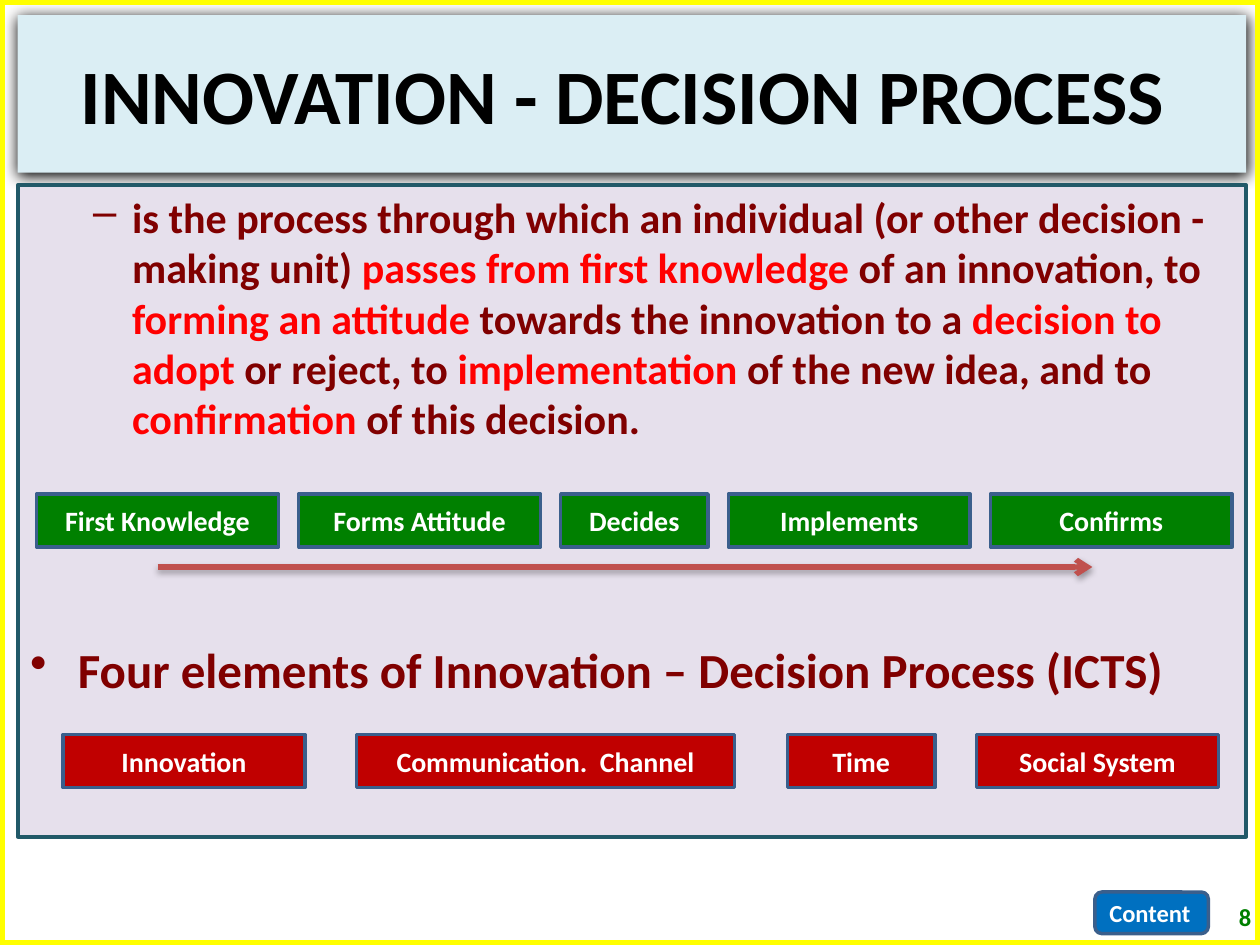
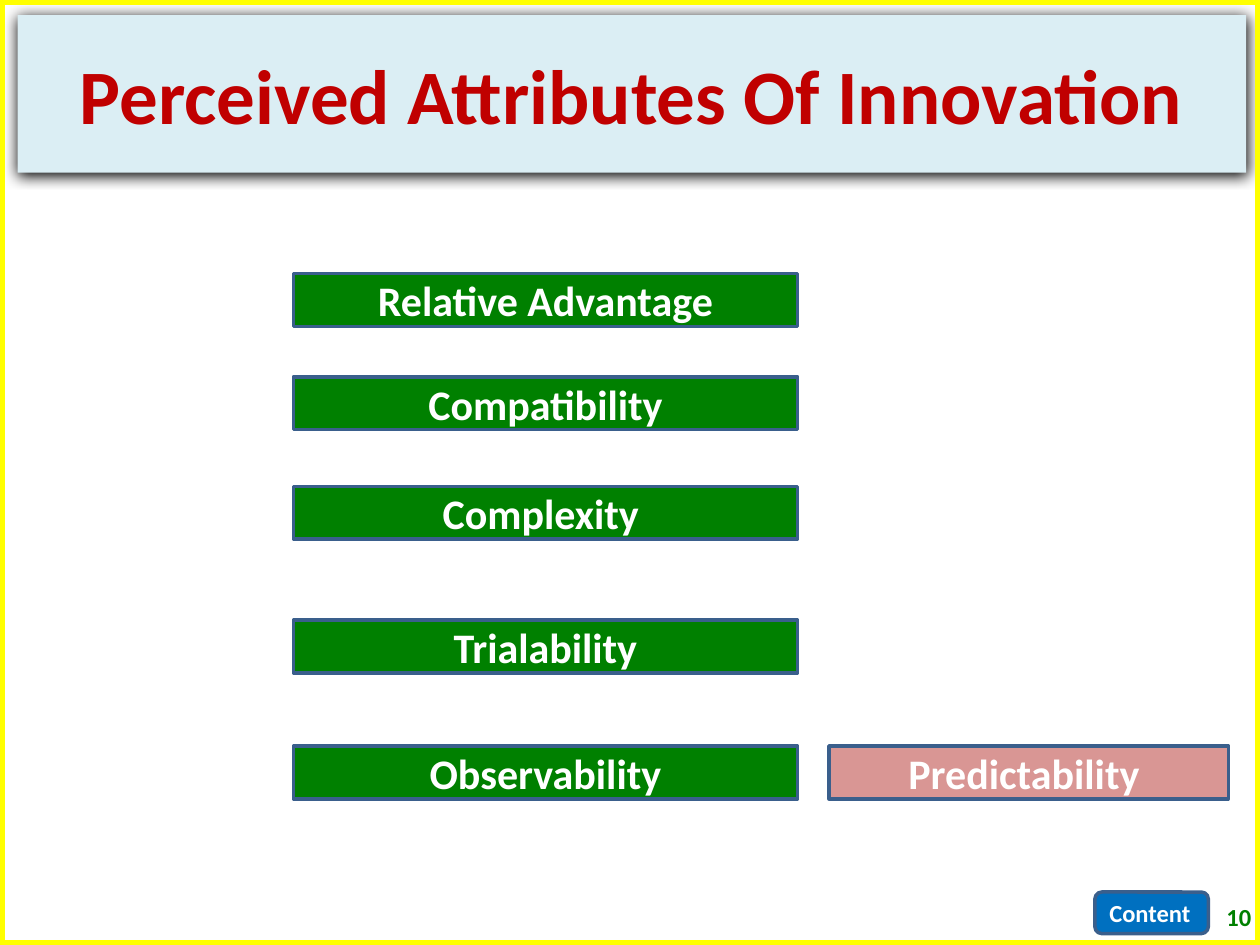
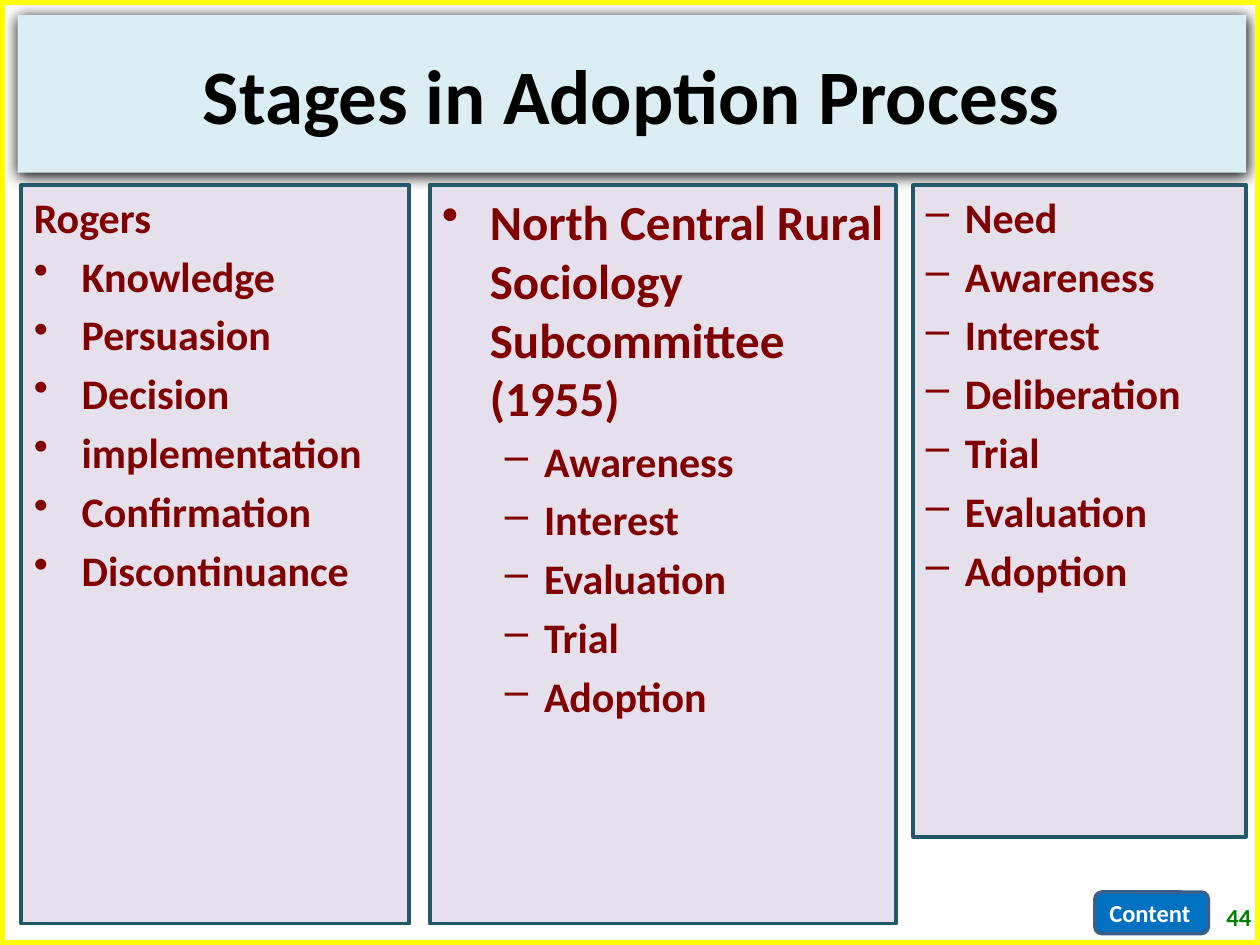
"""Build three slides on the innovation-decision and adoption processes."""
from lxml.etree import SubElement
from pptx import Presentation
from pptx.dml.color import RGBColor
from pptx.enum.shapes import MSO_CONNECTOR, MSO_SHAPE
from pptx.enum.text import MSO_ANCHOR, MSO_AUTO_SIZE, PP_ALIGN
from pptx.oxml import parse_xml
from pptx.oxml.ns import nsdecls, qn
from pptx.util import Inches, Pt

HUES = {
    "frame": "FFFF00", "button": "0070C0", "edge": "3A5F8C", "band": "DBEEF4",
    "panel": "E6E0EC", "rim": "215968", "text": "800000", "key": "FF0000",
    "green": "008000", "red": "C00000", "pink": "D99694", "arrow": "C0504D",
    "black": "000000", "white": "FFFFFF",
}
SHADE = (
    "<a:effectLst %s>"
    '<a:outerShdw blurRad="{}" dist="{}" dir="5400000" algn="ctr" rotWithShape="0">'
    '<a:srgbClr val="000000"><a:alpha val="{}"/></a:srgbClr>'
    "</a:outerShdw></a:effectLst>" % nsdecls("a")
)
MARKS = {
    "plain": ("", 0, 0, 0),
    "dot": ("•", 0, 0.38, 0.38),
    "sub": ("–", 1, 0.81, 0.31),
    "dash": ("–", 0, 0.31, 0.31),
}


def box(page, at, fill, edge, thick, kind=MSO_SHAPE.RECTANGLE):
    item = page.shapes.add_shape(kind, *map(Inches, at))
    item.shadow.inherit = False
    if fill:
        item.fill.solid()
        item.fill.fore_color.rgb = RGBColor.from_string(HUES[fill])
    else:
        item.fill.background()
    item.line.color.rgb = RGBColor.from_string(HUES[edge])
    item.line.width = Pt(thick)
    return item


def write(par, text, size, hue, align=PP_ALIGN.LEFT):
    par.alignment = align
    run = par.add_run()
    run.text = text
    run.font.name = "Calibri"
    run.font.size = Pt(size)
    run.font.bold = True
    run.font.color.rgb = RGBColor.from_string(HUES[hue])


deck = Presentation()
deck.slide_width, deck.slide_height = Inches(10), Inches(7.5)

heads = [
    ("INNOVATION - DECISION PROCESS ", "black", "8"),
    ("Perceived Attributes Of Innovation", "red", "10"),
    ("Stages in Adoption Process", "black", "44"),
]
for text, hue, count in heads:
    page = deck.slides.add_slide(deck.slide_layouts[5])
    frame = box(page, (0, 0, 10, 7.5), None, "frame", 6, MSO_SHAPE.ROUNDED_RECTANGLE)
    frame.adjustments[0] = 0
    button = box(page, (8.69, 7.08, 0.9, 0.33), "button", "edge", 2,
                 MSO_SHAPE.ROUNDED_RECTANGLE)
    write(button.text_frame.paragraphs[0], "Content", 14, "white")

    title = page.shapes.title
    title.left, title.top = Inches(0.14), Inches(0.12)
    title.width, title.height = Inches(9.75), Inches(1.25)
    title.fill.solid()
    title.fill.fore_color.rgb = RGBColor.from_string(HUES["band"])
    title._element.spPr.append(parse_xml(SHADE.format(Pt(8.5), Pt(1), 100000)))
    title.text_frame.auto_size = MSO_AUTO_SIZE.NONE
    title.text_frame.vertical_anchor = MSO_ANCHOR.MIDDLE
    write(title.text_frame.paragraphs[0], text, 44, hue, PP_ALIGN.CENTER)

    note = page.shapes.add_textbox(*map(Inches, (9.53, 7.08, 0.5, 0.39)))
    note.text_frame.word_wrap = True
    note.text_frame.vertical_anchor = MSO_ANCHOR.MIDDLE
    write(note.text_frame.paragraphs[0], count, 14, "green", PP_ALIGN.RIGHT)

first, second, third = deck.slides

story = [
    ("is the process through which an individual (or other decision - making unit) ", "text"),
    ("passes from first knowledge ", "key"),
    ("of an innovation, to ", "text"),
    ("forming an attitude ", "key"),
    ("towards the innovation to a ", "text"),
    ("decision to adopt ", "key"),
    ("or reject, to ", "text"),
    ("implementation", "key"),
    (" of the new idea, and to ", "text"),
    ("confirmation", "key"),
    (" of this decision.", "text"),
]
four = [("Four elements of Innovation – Decision Process (ICTS)", "text")]
north = [("North Central Rural Sociology Subcommittee (1955)", "text")]
stages = ["Awareness", "Interest", "Evaluation", "Trial", "Adoption"]
needs = ["Need", "Awareness", "Interest", "Deliberation", "Trial", "Evaluation", "Adoption"]
steps = ["Knowledge", "Persuasion", "Decision", "implementation", "Confirmation",
         "Discontinuance"]
panels = [
    (first, (0.14, 1.47, 9.75, 5.17),
     [("sub", 24, 0, story), ("dot", 28, 112, four)]),
    (third, (3.41, 1.47, 3.7, 5.86),
     [("dot", 28, 0, north)] + [("sub", 24, 4.8, [(word, "text")]) for word in stages]),
    (third, (7.25, 1.47, 2.64, 5.17),
     [("dash", 24, 4.8, [(word, "text")]) for word in needs]),
    (third, (0.17, 1.47, 3.08, 5.86),
     [("plain", 24, 0, [("Rogers", "text")])]
     + [("dot", 24, 4.8, [(word, "text")]) for word in steps]),
]
for page, at, lines in panels:
    body = box(page, at, "panel", "rim", 2.25).text_frame
    body.vertical_anchor = MSO_ANCHOR.TOP
    for row, (mark, size, gap, runs) in enumerate(lines):
        par = body.add_paragraph() if row else body.paragraphs[0]
        sign, par.level, left, hang = MARKS[mark]
        par.space_before = Pt(gap if row else 0)
        for text, hue in runs:
            write(par, text, size, hue)
        if sign:
            props = par._p.get_or_add_pPr()
            props.set("marL", str(Inches(left)))
            props.set("indent", str(-Inches(hang)))
            SubElement(props, qn("a:buChar")).set("char", sign)

tags = []
left = 0.29
for text, width in [("First Knowledge", 1.92), ("Forms Attitude", 1.92), ("Decides", 1.17),
                    ("Implements", 1.92), ("Confirms", 1.92)]:
    tags.append((first, left, 3.92, width, text, 16, "green"))
    left += width + 0.16
for text, left, width in [("Innovation", 0.5, 1.92), ("Communication.  Channel", 2.83, 3),
                          ("Time", 6.25, 1.17), ("Social System", 7.75, 1.92)]:
    tags.append((first, left, 5.83, width, text, 16, "red"))
for text, top in [("Relative Advantage", 2.17), ("Compatibility", 2.99), ("Complexity ", 3.86),
                  ("Trialability", 4.92), ("Observability", 5.92)]:
    tags.append((second, 2.33, top, 4, text, 24, "green"))
tags.append((second, 6.58, 5.92, 3.17, "Predictability ", 24, "pink"))

for page, left, top, width, text, size, hue in tags:
    tag = box(page, (left, top, width, 0.42), hue, "edge", 2)
    write(tag.text_frame.paragraphs[0], text, size, "white", PP_ALIGN.CENTER)

arrow = first.shapes.add_connector(MSO_CONNECTOR.STRAIGHT,
                                   *map(Inches, (1.25, 4.5, 8.67, 4.5)))
arrow.line.color.rgb = RGBColor.from_string(HUES["arrow"])
arrow.line.width = Pt(3)
SubElement(arrow.line._get_or_add_ln(), qn("a:tailEnd")).set("type", "arrow")
arrow._element.spPr.append(parse_xml(SHADE.format(Pt(3.1), Pt(1.8), 35000)))

deck.save("out.pptx")
